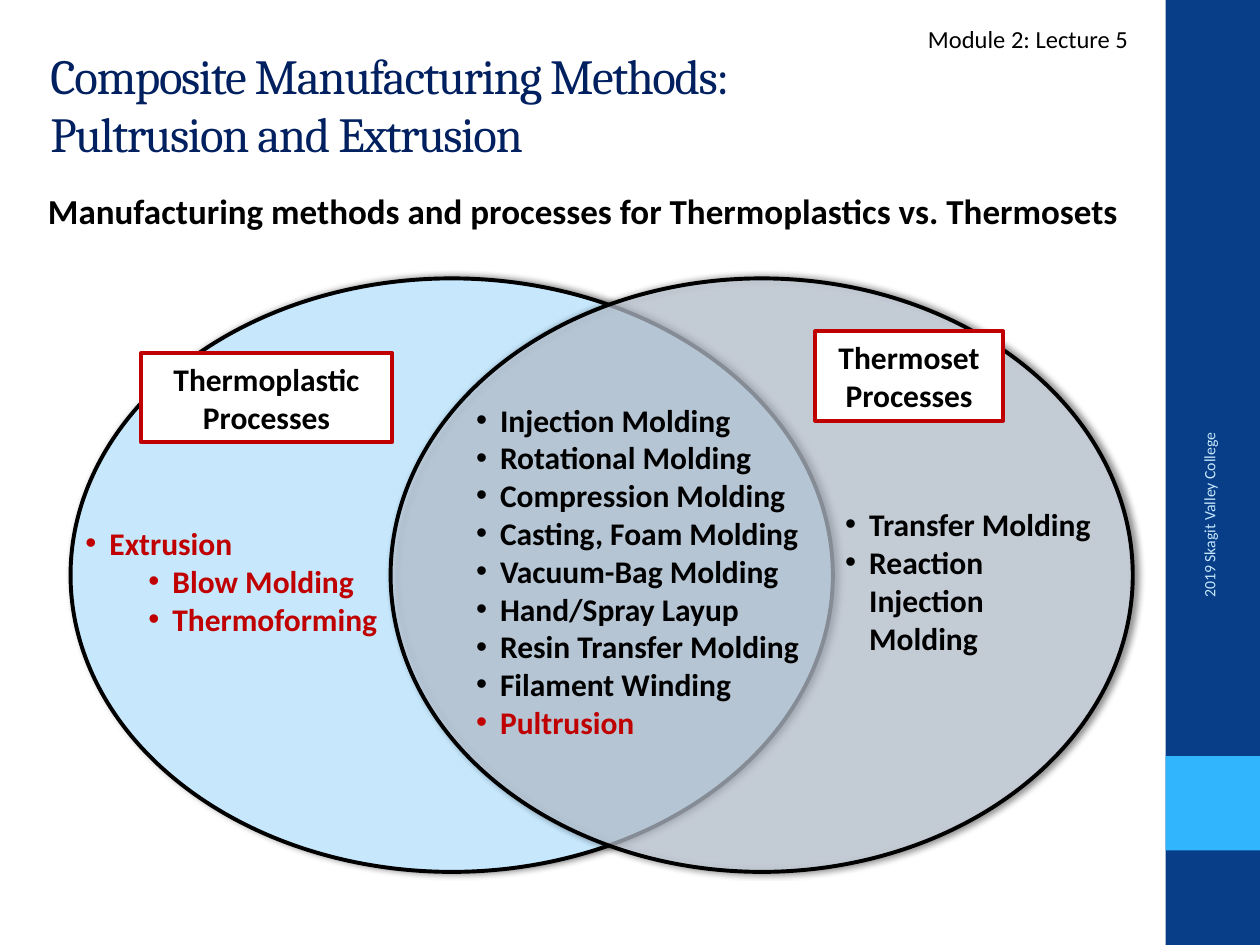
from dataclasses import dataclass

from lxml.etree import SubElement
from pptx import Presentation
from pptx.dml.color import RGBColor
from pptx.enum.shapes import MSO_SHAPE as Shape
from pptx.enum.text import MSO_ANCHOR as Anchor, MSO_AUTO_SIZE as AutoSize, PP_ALIGN as Align
from pptx.oxml.ns import qn
from pptx.util import Inches, Pt


@dataclass(frozen=True)
class Theme:
    # Colours
    navy: str = "073E87"
    sky: str = "31B6FD"
    pale_blue: str = "C6E7FC"
    grey_blue: str = "DAE6F6"
    title_blue: str = "002060"
    red: str = "C00000"
    black: str = "000000"
    white: str = "FFFFFF"
    # Fonts and sizes
    heading_font: str = "Cambria"
    body_font: str = "Calibri"
    title_size: float = 28
    subtitle_size: float = 20
    text_size: float = 18
    module_size: float = 14
    credit_size: float = 9
    outline: float = 2.25


THEME = Theme()


def write_paragraph(paragraph, text, *, size=THEME.text_size, color=THEME.black, bold=False,
                    font=THEME.body_font, align=Align.LEFT, level=0, bullet=False):
    """Fill one paragraph and format it."""
    paragraph.text = text
    paragraph.alignment = align
    paragraph.space_before = Pt(0)
    if bullet:
        paragraph.level = level
        properties = paragraph._p.get_or_add_pPr()
        properties.set("marL", str(Inches(0.19 + 0.5 * level)))
        properties.set("indent", str(Inches(-0.19)))
        SubElement(properties, qn("a:buFont"), typeface="Arial")
        SubElement(properties, qn("a:buChar"), char="•")
    for run in paragraph.runs:
        run.font.name = font
        run.font.size = Pt(size)
        run.font.bold = bold
        run.font.color.rgb = RGBColor.from_string(color)


class SlideBuilder:
    def __init__(self, presentation, theme):
        self.theme = theme
        self.slide = presentation.slides.add_slide(presentation.slide_layouts[1])

    def place(self, shape, box):
        shape.left, shape.top, shape.width, shape.height = map(Inches, box)

    def title(self, text, box):
        shape = self.slide.shapes.title
        self.place(shape, box)
        frame = shape.text_frame
        frame.auto_size = AutoSize.NONE
        frame.vertical_anchor = Anchor.MIDDLE
        paragraph = frame.paragraphs[0]
        write_paragraph(paragraph, text, size=self.theme.title_size,
                        color=self.theme.title_blue, font=self.theme.heading_font)
        for run in paragraph.runs:
            run.font._element.set("spc", "-80")

    def subtitle(self, text, box):
        shape = self.slide.placeholders[1]
        self.place(shape, box)
        frame = shape.text_frame
        frame.auto_size = AutoSize.NONE
        paragraph = frame.paragraphs[0]
        properties = paragraph._p.get_or_add_pPr()
        properties.set("marL", str(Inches(0.09)))
        properties.set("indent", "0")
        SubElement(properties, qn("a:buNone"))
        write_paragraph(paragraph, text, size=self.theme.subtitle_size, bold=True)

    def shape(self, kind, box, fill, line=None):
        shape = self.slide.shapes.add_shape(kind, *map(Inches, box))
        shape.shadow.inherit = False
        shape.fill.solid()
        shape.fill.fore_color.rgb = RGBColor.from_string(fill)
        if line:
            shape.line.color.rgb = RGBColor.from_string(line)
            shape.line.width = Pt(self.theme.outline)
        else:
            shape.line.fill.background()
        return shape

    def venn_circle(self, box, fill, opacity=100):
        shape = self.shape(Shape.OVAL, box, fill, self.theme.black)
        properties = shape._element.spPr
        if opacity < 100:
            color = properties.find(qn("a:solidFill")).find(qn("a:srgbClr"))
            SubElement(color, qn("a:alpha"), val=str(opacity * 1000))
        shadow = SubElement(properties.find(qn("a:effectLst")), qn("a:outerShdw"),
                            blurRad=str(Pt(4)), dist=str(Pt(2)), dir="0",
                            algn="ctr", rotWithShape="0")
        color = SubElement(shadow, qn("a:srgbClr"), val=self.theme.black)
        SubElement(color, qn("a:alpha"), val="60000")

    def label(self, text, box):
        shape = self.shape(Shape.RECTANGLE, box, self.theme.white, self.theme.red)
        frame = shape.text_frame
        frame.word_wrap = True
        write_paragraph(frame.paragraphs[0], text, bold=True, align=Align.CENTER)

    def text_box(self, box, anchor=Anchor.TOP):
        shape = self.slide.shapes.add_textbox(*map(Inches, box))
        shape.text_frame.word_wrap = True
        shape.text_frame.vertical_anchor = anchor
        return shape

    def text(self, text, box, rotation=0, anchor=Anchor.TOP, **style):
        shape = self.text_box(box, anchor)
        shape.rotation = rotation
        write_paragraph(shape.text_frame.paragraphs[0], text, **style)

    def bullets(self, items, box):
        """Each item is (text, level, colour)."""
        frame = self.text_box(box).text_frame
        for index, (text, level, color) in enumerate(items):
            paragraph = frame.add_paragraph() if index else frame.paragraphs[0]
            write_paragraph(paragraph, text, color=color, bold=True, level=level, bullet=True)


def main():
    presentation = Presentation()
    presentation.slide_width, presentation.slide_height = Inches(10), Inches(7.5)
    builder = SlideBuilder(presentation, THEME)

    # Side band
    builder.shape(Shape.RECTANGLE, (9.25, 0, 0.75, 7.5), THEME.navy)
    builder.shape(Shape.RECTANGLE, (9.25, 6, 0.75, 0.75), THEME.sky)
    builder.text("2019 Skagit Valley College", (8.3, 4.43, 2.59, 0.4), rotation=270,
                 anchor=Anchor.MIDDLE, size=THEME.credit_size, color=THEME.pale_blue,
                 align=Align.RIGHT)

    # Headings
    builder.title("Composite Manufacturing Methods:\vPultrusion and Extrusion",
                  (0.3, 0.2, 8.33, 1.25))
    builder.subtitle("Manufacturing methods and processes for Thermoplastics vs. Thermosets",
                     (0.19, 1.45, 9.06, 1.03))
    builder.text("Module 2: Lecture 5", (6.99, 0.14, 2.34, 0.34),
                 size=THEME.module_size, align=Align.CENTER)

    # Venn diagram
    builder.venn_circle((0.56, 2.21, 6.05, 4.71), THEME.pale_blue)
    builder.venn_circle((3.1, 2.21, 5.89, 4.71), THEME.grey_blue, opacity=61)
    builder.label("Thermoplastic Processes", (1.12, 2.8, 1.99, 0.71))
    builder.label("Thermoset Processes", (6.47, 2.63, 1.49, 0.71))

    # Process lists: thermoplastic, shared, thermoset
    builder.bullets([("Extrusion", 0, THEME.red),
                     ("Blow Molding", 1, THEME.red),
                     ("Thermoforming", 1, THEME.red)], (0.58, 4.11, 2.62, 1.01))
    shared = ["Injection Molding", "Rotational Molding", "Compression Molding",
              "Casting, Foam Molding", "Vacuum-Bag Molding", "Hand/Spray Layup",
              "Resin Transfer Molding", "Filament Winding"]
    builder.bullets([(name, 0, THEME.black) for name in shared]
                    + [("Pultrusion", 0, THEME.red)], (3.68, 3.13, 2.85, 3.03))
    builder.bullets([("Transfer Molding", 0, THEME.black),
                     ("Reaction Injection Molding", 0, THEME.black)], (6.61, 3.96, 2.18, 1.58))

    presentation.save("out.pptx")


if __name__ == "__main__":
    main()
